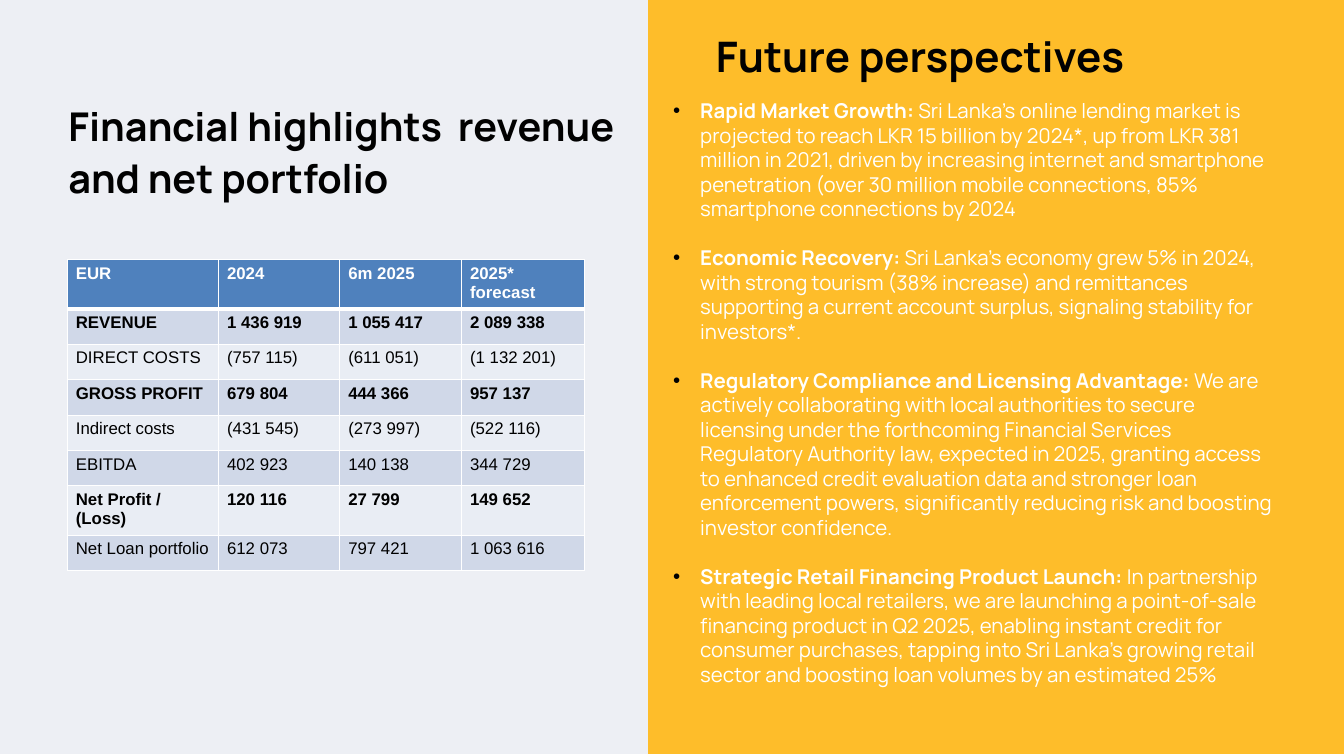
import pptx
import pptx.dml.color
import pptx.enum.shapes
import pptx.enum.text
import pptx.oxml.ns
import pptx.util
from lxml import etree

PX = 6350  # EMU per px, 144 px to the inch
SLIDE_W, SLIDE_H, SPLIT = 2240, 1256, 1080

COLORS = {
    "mist": "EDEFF4",
    "amber": "FEBD2A",
    "title": "010101",
    "black": "000000",
    "white": "FFFFFF",
    "header": "4F81BD",
    "band_dark": "D0D8E8",
    "band_light": "E9EDF4",
}

COLUMN_WIDTHS = [252, 202, 203, 206]
ROW_HEIGHT = 59
FINANCIALS = [
    ["EUR", "2024", "6m 2025", "2025* forecast"],
    ["REVENUE", "1 436 919", "1 055 417", "2 089 338"],
    ["DIRECT COSTS", "(757 115)", "(611 051)", "(1 132 201)"],
    ["GROSS PROFIT", "679 804", "444 366", "957 137"],
    ["Indirect costs", "(431 545)", "(273 997)", "(522 116)"],
    ["EBITDA", "402 923", "140 138", "344 729"],
    ["Net Profit / (Loss)", "120 116", "27 799", "149 652"],
    ["Net Loan portfolio", "612 073", "797 421", "1 063 616"],
]
BOLD_ROWS = {"EUR", "REVENUE", "GROSS PROFIT", "Net Profit / (Loss)"}

PERSPECTIVES = [
    ("Rapid Market Growth: ",
     "Sri Lanka’s online lending market is projected to reach LKR 15 billion by 2024*, "
     "up from LKR 381 million in 2021, driven by increasing internet and smartphone "
     "penetration (over 30 million mobile connections, 85% smartphone connections by 2024"),
    ("Economic Recovery: ",
     "Sri Lanka’s economy grew 5% in 2024, with strong tourism (38% increase) and "
     "remittances supporting a current account surplus, signaling stability for investors*."),
    ("Regulatory Compliance and Licensing Advantage: ",
     "We are actively collaborating with local authorities to secure licensing under the "
     "forthcoming Financial Services Regulatory Authority law, expected in 2025, granting "
     "access to enhanced credit evaluation data and stronger loan enforcement powers, "
     "significantly reducing risk and boosting investor confidence."),
    ("Strategic Retail Financing Product Launch: ",
     "In partnership with leading local retailers, we are launching a point-of-sale "
     "financing product in Q2 2025, enabling instant credit for consumer purchases, "
     "tapping into Sri Lanka’s growing retail sector and boosting loan volumes by an "
     "estimated 25%"),
]


def px(*lengths):
    return [pptx.util.Emu(length * PX) for length in lengths]


def rgb(name):
    return pptx.dml.color.RGBColor.from_string(COLORS[name])


def sub(parent, tag, **attributes):
    return etree.SubElement(parent, pptx.oxml.ns.qn(tag), attributes)


def style_font(paragraph, name, size, color, bold=None):
    font = paragraph.font
    font.name = name
    font.size = pptx.util.Pt(size)
    font.color.rgb = rgb(color)
    font.bold = bold


def set_indent(paragraph, left, first_line):
    properties = paragraph._p.get_or_add_pPr()
    margin, indent = px(left, first_line)
    properties.set("marL", str(margin))
    properties.set("indent", str(indent))
    return properties


def add_panel(slide, left, width, color):
    panel = slide.shapes.add_shape(
        pptx.enum.shapes.MSO_SHAPE.RECTANGLE, *px(left, 0, width, SLIDE_H))
    panel.shadow.inherit = False
    panel.fill.solid()
    panel.fill.fore_color.rgb = rgb(color)
    panel.line.fill.background()


def add_text_frame(slide, *box):
    frame = slide.shapes.add_textbox(*px(*box)).text_frame
    frame.word_wrap = True
    frame.auto_size = pptx.enum.text.MSO_AUTO_SIZE.SHAPE_TO_FIT_TEXT
    frame.margin_left = frame.margin_right = frame.margin_bottom = 0
    frame.margin_top = px(2)[0]
    return frame


def add_title(slide, text, size, *box):
    title = add_text_frame(slide, *box).paragraphs[0]
    title.text = text
    set_indent(title, 2, 0)
    title.line_spacing = 1.09
    style_font(title, "Manrope", size, "title", True)


def set_bullet(paragraph):
    """Give the paragraph a black bullet with a hanging indent."""
    properties = set_indent(paragraph, 48, -45)
    bullet_color = sub(properties, "a:buClr")
    sub(bullet_color, "a:srgbClr", val=COLORS["black"])
    sub(properties, "a:buFont", typeface="Arial")
    sub(properties, "a:buChar", char="•")


def add_perspectives(slide, *box):
    frame = add_text_frame(slide, *box)
    frame.margin_right = px(70)[0]
    for index, (heading, detail) in enumerate(PERSPECTIVES):
        point = frame.add_paragraph() if index else frame.paragraphs[0]
        set_bullet(point)
        if index:
            point.space_before = pptx.util.Pt(20.4)
        style_font(point, "Manrope", 17, "white")
        for text, bold in ((heading, True), (detail, False)):
            run = point.add_run()
            run.text = text
            run.font.bold = bold


def set_borders(cell, top, bottom):
    """Draw white borders; the side borders are 1 pt, top and bottom as given."""
    properties = cell._tc.get_or_add_tcPr()
    for side, points in (("L", 1), ("R", 1), ("T", top), ("B", bottom)):
        border = sub(properties, f"a:ln{side}", w=str(pptx.util.Pt(points)))
        sub(sub(border, "a:solidFill"), "a:srgbClr", val=COLORS["white"])


def add_financials(slide, left, top):
    table = slide.shapes.add_table(
        len(FINANCIALS), len(COLUMN_WIDTHS),
        *px(left, top, sum(COLUMN_WIDTHS), ROW_HEIGHT * len(FINANCIALS))).table
    for column, width in zip(table.columns, px(*COLUMN_WIDTHS)):
        column.width = width
    for index, values in enumerate(FINANCIALS):
        table.rows[index].height = px(ROW_HEIGHT)[0]
        band = "header" if index == 0 else "band_dark" if index % 2 else "band_light"
        for cell, value in zip(table.rows[index].cells, values):
            set_borders(cell, 3 if index == 1 else 1, 3 if index == 0 else 1)
            cell.fill.solid()
            cell.fill.fore_color.rgb = rgb(band)
            cell.text = value
            style_font(cell.text_frame.paragraphs[0], "Arial", 14,
                       "black" if index else "white", values[0] in BOLD_ROWS)


def main():
    presentation = pptx.Presentation()
    presentation.slide_width, presentation.slide_height = px(SLIDE_W, SLIDE_H)
    slide = presentation.slides.add_slide(presentation.slide_layouts[6])

    add_panel(slide, 0, SPLIT, "mist")
    add_title(slide, "Financial highlights  revenue and net portfolio", 33,
              112, 161, 929, 170)
    add_financials(slide, 112, 433)

    add_panel(slide, SPLIT, SLIDE_W - SPLIT, "amber")
    add_title(slide, "Future perspectives", 35, 1191, 41, 734, 95)
    add_perspectives(slide, 1119, 162, 1080, 1032)

    presentation.save("out.pptx")


if __name__ == "__main__":
    main()
